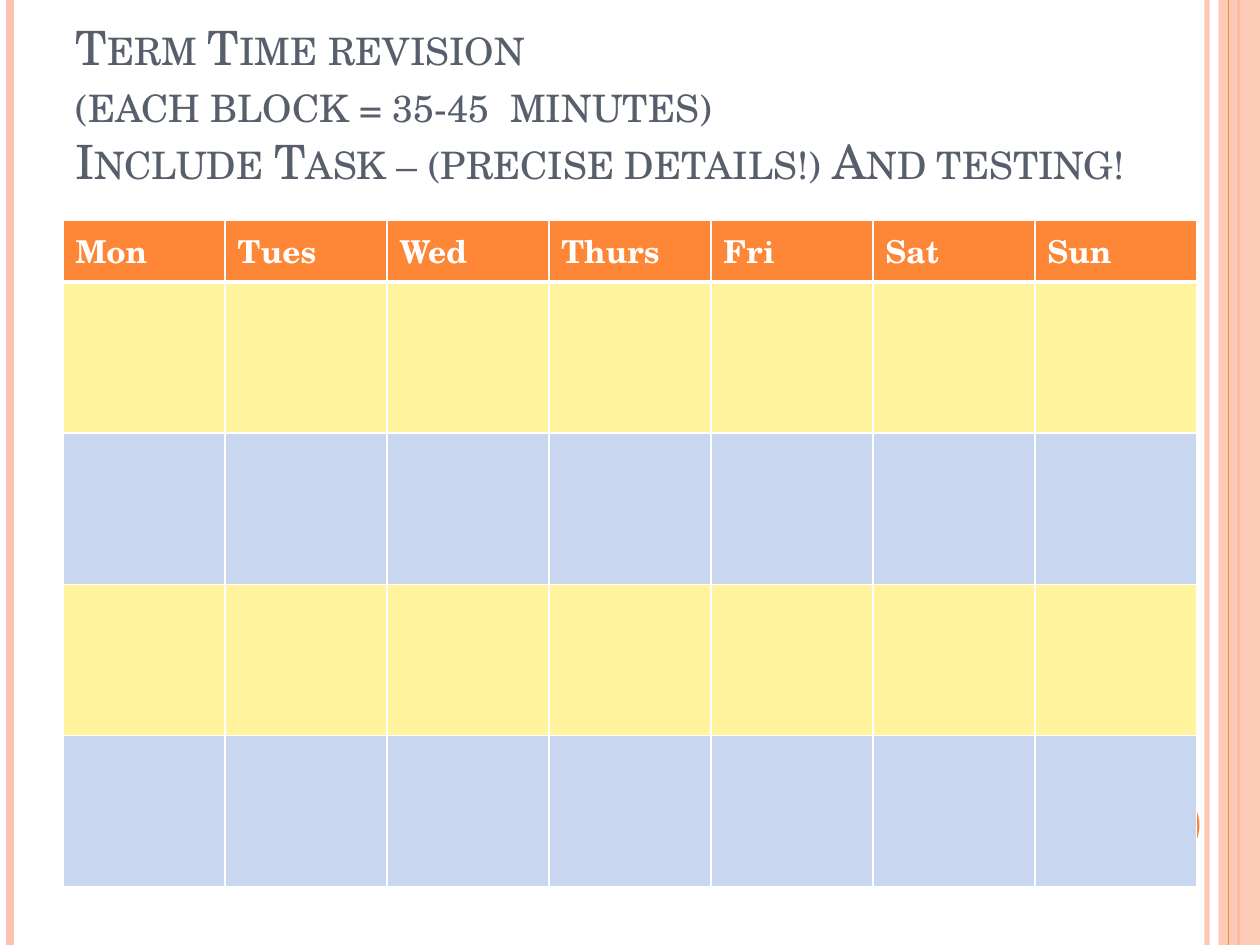
import pptx
import pptx.util
import pptx.dml.color
import pptx.enum.shapes
import pptx.enum.text
import pptx.oxml.ns
from lxml import etree

Inches = pptx.util.Inches
Pt = pptx.util.Pt
qn = pptx.oxml.ns.qn

COLORS = {
    "orange": "FE8637",
    "peach": "FEC3AE",
    "slate": "575F6D",
    "white": "FFFFFF",
    "yellow": "FFF39D",
    "blue": "C8D6F0",
}
FONT = "TeX Gyre Schola"
TITLE_LINES = [
    "Term Time revision",
    "(each block = 35-45  minutes)",
    "Include Task – (precise details!) And testing!",
]
DAYS = ["Mon", "Tues", "Wed", "Thurs", "Fri", "Sat", "Sun"]
BLOCK_FILLS = ["yellow", "blue", "yellow", "blue"]
HEADER_HEIGHT = 0.48
BLOCK_HEIGHT = 1.2
TABLE_BOX = (0.5, 1.75, 9, HEADER_HEIGHT + BLOCK_HEIGHT * len(BLOCK_FILLS))


def rgb(name):
    return pptx.dml.color.RGBColor.from_string(COLORS[name])


def set_opacity(shape, percent):
    color = shape._element.spPr.find(".//" + qn("a:srgbClr"))
    etree.SubElement(color, qn("a:alpha")).set("val", str(percent * 1000))


def add_rule(page, x, color, width, opacity=100):
    rule = page.shapes.add_connector(
        pptx.enum.shapes.MSO_CONNECTOR.STRAIGHT,
        Inches(x), Inches(0), Inches(x), Inches(7.5))
    rule.line.color.rgb = rgb(color)
    rule.line.width = Pt(width)
    if opacity < 100:
        set_opacity(rule, opacity)
    etree.SubElement(rule._element.spPr, qn("a:effectLst"))


def add_solid(page, kind, box, color, opacity=100):
    shape = page.shapes.add_shape(kind, *map(Inches, box))
    shape.shadow.inherit = False
    shape.fill.solid()
    shape.fill.fore_color.rgb = rgb(color)
    shape.line.fill.background()
    if opacity < 100:
        set_opacity(shape, opacity)


def add_borders(cell, top, bottom):
    properties = cell._tc.get_or_add_tcPr()
    for side, width in (("L", 1), ("R", 1), ("T", top), ("B", bottom)):
        border = etree.SubElement(properties, qn("a:ln" + side), w=str(Pt(width)))
        fill = etree.SubElement(border, qn("a:solidFill"))
        etree.SubElement(fill, qn("a:srgbClr"), val=COLORS["white"])


def style_span(span, size, color):
    span.font.name = FONT
    span.font.size = Pt(size)
    span.font.color.rgb = rgb(color)


def add_decoration(page):
    shapes = pptx.enum.shapes.MSO_SHAPE
    add_rule(page, 9.58, "peach", 3, 93)
    add_rule(page, 0.08, "peach", 4.5)
    add_rule(page, 9.83, "orange", 1.5)
    add_solid(page, shapes.RECTANGLE, (9.67, 0, 0.33, 7.5), "peach", 87)
    add_rule(page, 9.75, "orange", 0.75)
    add_solid(page, shapes.OVAL, (8.92, 6.25, 0.6, 0.6), "orange")


def fill_title(page):
    title = page.shapes.title
    title.left, title.top, title.width, title.height = map(Inches, (0.5, 0.3, 9, 1.25))
    frame = title.text_frame
    frame.text = "\v".join(TITLE_LINES)
    frame.word_wrap = True
    frame.auto_size = pptx.enum.text.MSO_AUTO_SIZE.NONE
    frame.vertical_anchor = pptx.enum.text.MSO_ANCHOR.BOTTOM
    para = frame.paragraphs[0]
    para.alignment = pptx.enum.text.PP_ALIGN.LEFT
    para.font.size = Pt(27)
    for span in para.runs:
        style_span(span, 27, "slate")
        span.font._element.set("cap", "small")


def add_timetable(page):
    fills = ["orange"] + BLOCK_FILLS
    table = page.shapes.add_table(len(fills), len(DAYS), *map(Inches, TABLE_BOX)).table
    for column in table.columns:
        column.width = Inches(TABLE_BOX[2] / len(DAYS))
    for index, fill in enumerate(fills):
        table.rows[index].height = Inches(BLOCK_HEIGHT if index else HEADER_HEIGHT)
        for cell in table.rows[index].cells:
            add_borders(cell, 3 if index == 1 else 1, 3 if index == 0 else 1)
            cell.fill.solid()
            cell.fill.fore_color.rgb = rgb(fill)
    for cell, day in zip(table.rows[0].cells, DAYS):
        cell.text_frame.text = day
        span = cell.text_frame.paragraphs[0].runs[0]
        style_span(span, 18, "white")
        span.font.bold = True


def main():
    deck = pptx.Presentation()
    deck.slide_width, deck.slide_height = Inches(10), Inches(7.5)
    page = deck.slides.add_slide(deck.slide_layouts[5])
    add_decoration(page)
    fill_title(page)
    add_timetable(page)
    deck.save("out.pptx")


if __name__ == "__main__":
    main()
